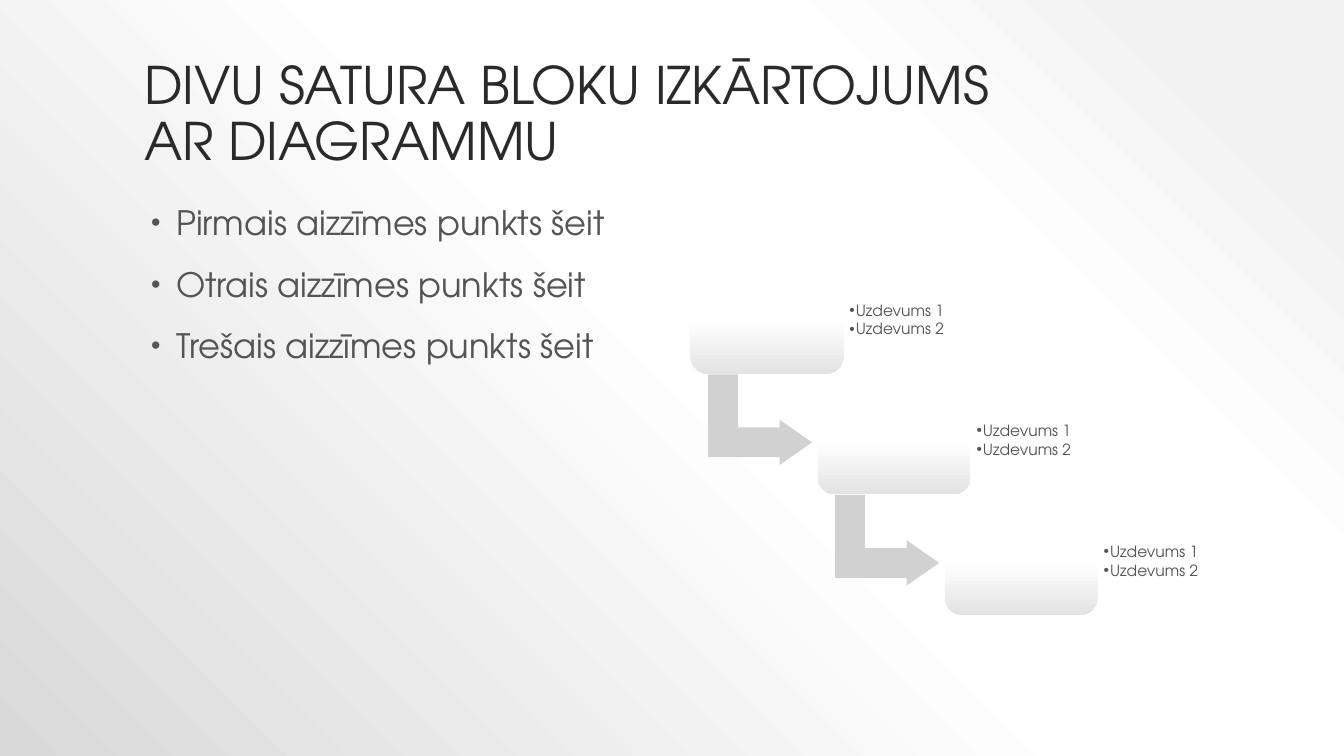
from pptx import Presentation
from pptx.dml.color import RGBColor
from pptx.enum import shapes, text
from pptx.oxml import parse_xml
from pptx.oxml.ns import nsdecls, qn
from pptx.util import Pt

FONT = "TeX Gyre Adventor"
TITLE_COLOR = RGBColor(0x2A, 0x2A, 0x2A)
TEXT_COLOR = RGBColor(0x54, 0x54, 0x54)
ARROW_COLOR = RGBColor(0xD1, 0xD1, 0xD1)
WHITE = RGBColor(0xFF, 0xFF, 0xFF)
BOX_SHADE = RGBColor(0xE3, 0xE3, 0xE3)
CORNER_SHADE = RGBColor(0xF2, 0xF2, 0xF2)
FAR_SHADE = RGBColor(0xD9, 0xD9, 0xD9)


def set_gradient(owner, element, stops, direction):
    """Fill owner with (percent, colour) stops; element holds its fill XML."""
    owner.fill.background()
    marks = "".join(
        f'<a:gs pos="{percent * 1000}"><a:srgbClr val="{color}"/></a:gs>'
        for percent, color in stops
    )
    empty_fill = element.find(".//" + qn("a:noFill"))
    empty_fill.getparent().replace(empty_fill, parse_xml(
        f'<a:gradFill {nsdecls("a")} rotWithShape="1">'
        f"<a:gsLst>{marks}</a:gsLst>{direction}</a:gradFill>"
    ))


def add_text(place, lines, size, color, anchor, inset=None, indent=None,
             before=0, after=0):
    """Add a text box; indent is (left, hanging, bullet percent) in points."""
    box = page.shapes.add_textbox(*map(Pt, place))
    frame = box.text_frame
    frame.word_wrap = True
    frame.vertical_anchor = anchor
    if inset is not None:
        frame.margin_left = frame.margin_right = Pt(inset)
        frame.margin_top = frame.margin_bottom = Pt(inset)
    frame.text = "\n".join(lines)
    for para in frame.paragraphs:
        para.line_spacing = 0.9
        para.space_before = Pt(before)
        para.space_after = Pt(after)
        for span in para.runs:
            span.font.name = FONT
            span.font.size = Pt(size)
            span.font.color.rgb = color
        if indent:
            left, hanging, percent = indent
            properties = para._p.get_or_add_pPr()
            properties.set("marL", str(Pt(left)))
            properties.set("indent", str(-Pt(hanging)))
            for bullet in (
                f'<a:buClr {nsdecls("a")}><a:srgbClr val="{color}"/></a:buClr>',
                f'<a:buSzPct {nsdecls("a")} val="{percent * 1000}"/>',
                f'<a:buFont {nsdecls("a")} typeface="Arial"/>',
                f'<a:buChar {nsdecls("a")} char="•"/>',
            ):
                properties.append(parse_xml(bullet))


deck = Presentation()
deck.slide_width, deck.slide_height = Pt(960), Pt(540)
page = deck.slides.add_slide(deck.slide_layouts[6])
set_gradient(
    page.background, page.element,
    [(10, CORNER_SHADE), (28, WHITE), (48, WHITE), (100, FAR_SHADE)],
    '<a:path path="circle"><a:fillToRect l="100000" b="100000"/></a:path>',
)

add_text((96, 21.6, 768, 104.4),
         ["DIVU SATURA BLOKU IZKĀRTOJUMS \vAR DIAGRAMMU"],
         37, TITLE_COLOR, text.MSO_ANCHOR.BOTTOM)
add_text((97.2, 144, 370.8, 342),
         [f"{ordinal} aizzīmes punkts šeit"
          for ordinal in ("Pirmais", "Otrais", "Trešais")],
         24, TEXT_COLOR, text.MSO_ANCHOR.TOP, indent=(21.6, 18, 80), before=18)

# Staircase of three steps, with an arrow from each step to the next
STEP_COUNT = 3
STEP_WIDTH, STEP_HEIGHT = 109.4, 76.3
for step in range(STEP_COUNT):
    left, top = 493.2 + 90.8 * step, 190.8 + 86.1 * step

    if step < STEP_COUNT - 1:
        arrow = page.shapes.add_shape(
            shapes.MSO_SHAPE.BENT_UP_ARROW,
            Pt(left + 17.3), Pt(top + 71.9), Pt(64.8), Pt(74.2))
        arrow.rotation = 90
        for index, value in enumerate((0.328, 0.25, 0.358)):
            arrow.adjustments[index] = value
        arrow.fill.solid()
        arrow.fill.fore_color.rgb = ARROW_COLOR
        arrow.line.fill.background()
        arrow.shadow.inherit = False

    block = page.shapes.add_shape(
        shapes.MSO_SHAPE.ROUNDED_RECTANGLE,
        Pt(left), Pt(top), Pt(STEP_WIDTH), Pt(STEP_HEIGHT))
    block.adjustments[0] = 0.167
    set_gradient(block, block.element,
                 [(0, WHITE), (50, WHITE), (100, BOX_SHADE)],
                 '<a:lin ang="5400000" scaled="0"/>')
    block.line.fill.background()
    block.shadow.inherit = False

    add_text((left + STEP_WIDTH, top + 7.2, 79.9, 61.9),
             ["Uzdevums 1", "Uzdevums 2"], 11, TEXT_COLOR,
             text.MSO_ANCHOR.MIDDLE, inset=4.2, indent=(4.5, 4.5, 100),
             after=1.65)

deck.save("out.pptx")
